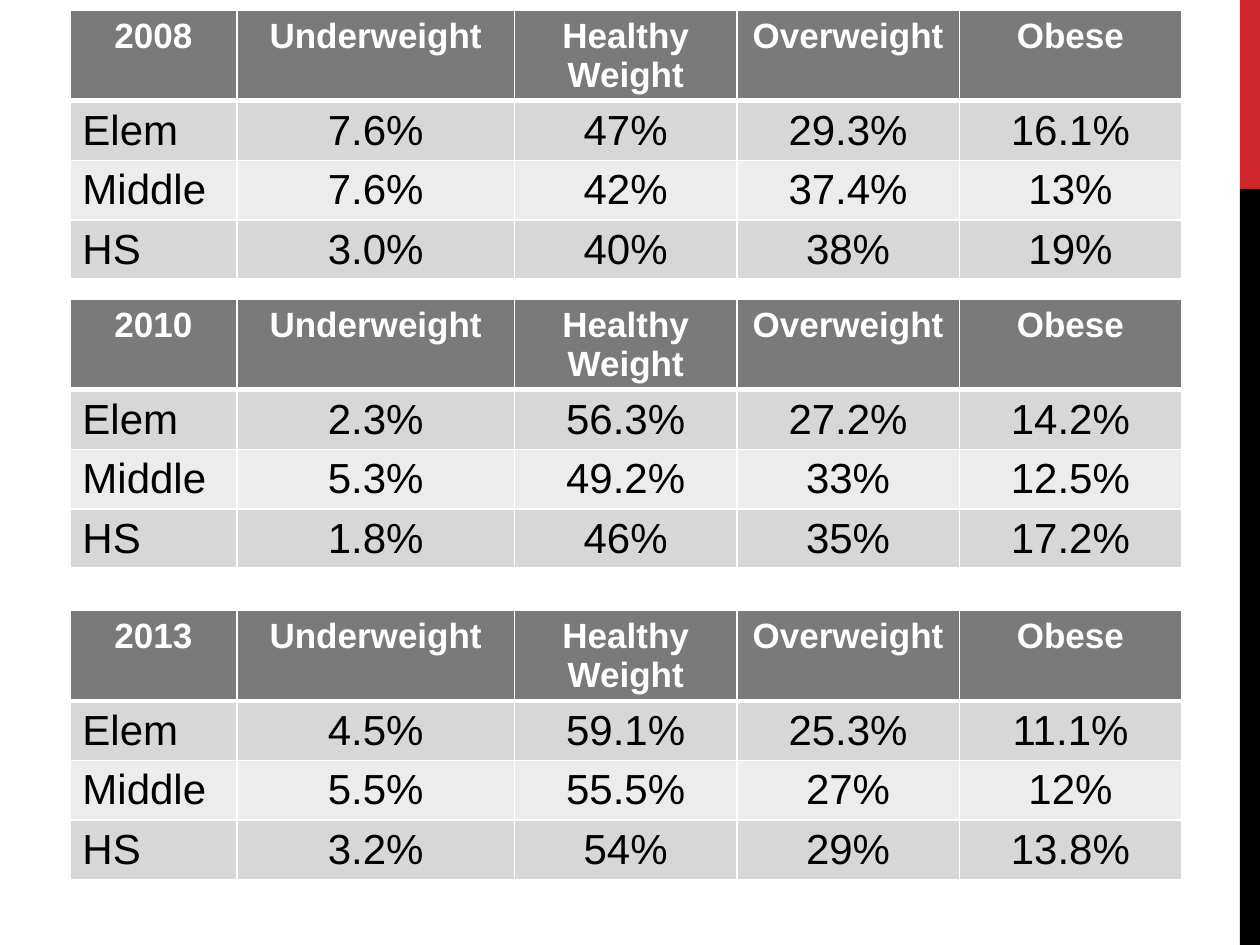
"""Build a slide of three yearly weight-category tables beside a two-colour edge band."""
from lxml.etree import SubElement
from pptx import Presentation
from pptx.dml.color import RGBColor
from pptx.enum.shapes import MSO_SHAPE
from pptx.enum.text import PP_ALIGN
from pptx.oxml.ns import qn
from pptx.util import Pt

CATEGORIES = ["Underweight", "Healthy Weight", "Overweight", "Obese"]
YEARS = [
    ("2008", 5.76, [
        ("Elem", "7.6%", "47%", "29.3%", "16.1%"),
        ("Middle", "7.6%", "42%", "37.4%", "13%"),
        ("HS", "3.0%", "40%", "38%", "19%"),
    ]),
    ("2010", 170.9, [
        ("Elem", "2.3%", "56.3%", "27.2%", "14.2%"),
        ("Middle", "5.3%", "49.2%", "33%", "12.5%"),
        ("HS", "1.8%", "46%", "35%", "17.2%"),
    ]),
    ("2013", 348.7, [
        ("Elem", "4.5%", "59.1%", "25.3%", "11.1%"),
        ("Middle", "5.5%", "55.5%", "27%", "12%"),
        ("HS", "3.2%", "54%", "29%", "13.8%"),
    ]),
]
BANDS = [("D1282E", 0, 108), ("000000", 108, 432)]
PAGE_WIDTH, PAGE_HEIGHT = 720, 540
BAND_WIDTH = 11.5
TABLE_LEFT, TABLE_HEIGHT, ROW_HEIGHT = 39.9, 163.4, 29.4
COLUMN_WIDTHS = [95.5, 158.6, 127.1, 127.1, 127.1]
HEADER_FILL, ROW_FILLS = "7A7A7A", ["ECECEC", "D7D7D7"]


def color(value):
    return RGBColor.from_string(value)


def add_band(page, fill, top, height):
    band = page.shapes.add_shape(
        MSO_SHAPE.RECTANGLE, Pt(PAGE_WIDTH - BAND_WIDTH), Pt(top), Pt(BAND_WIDTH), Pt(height))
    band.shadow.inherit = False
    band.fill.solid()
    band.fill.fore_color.rgb = color(fill)
    band.line.fill.background()


def add_borders(cell, top, bottom):
    properties = cell._tc.get_or_add_tcPr()
    for side, width in (("L", 1), ("R", 1), ("T", top), ("B", bottom)):
        line = SubElement(properties, qn(f"a:ln{side}"), w=str(Pt(width)))
        SubElement(SubElement(line, qn("a:solidFill")), qn("a:srgbClr"), val="FFFFFF")


def fill_cell(cell, text, row, column):
    header = row == 0
    add_borders(cell, top=3 if row == 1 else 1, bottom=3 if header else 1)
    cell.fill.solid()
    cell.fill.fore_color.rgb = color(HEADER_FILL if header else ROW_FILLS[row % 2])
    para = cell.text_frame.paragraphs[0]
    para.alignment = PP_ALIGN.CENTER if header or column else PP_ALIGN.LEFT
    span = para.add_run()
    span.text = text
    span.font.name = "Arial"
    span.font.size = Pt(20 if header else 24)
    span.font.bold = header
    span.font.color.rgb = color("FFFFFF" if header else "000000")


def add_year_table(page, year, top, levels):
    rows = [(year, *CATEGORIES), *levels]
    frame = page.shapes.add_table(
        len(rows), len(COLUMN_WIDTHS), Pt(TABLE_LEFT), Pt(top),
        Pt(sum(COLUMN_WIDTHS)), Pt(TABLE_HEIGHT))
    table = frame.table
    for column, width in zip(table.columns, COLUMN_WIDTHS):
        column.width = Pt(width)
    for row in table.rows:
        row.height = Pt(ROW_HEIGHT)
    frame.height = Pt(TABLE_HEIGHT)
    for row, texts in enumerate(rows):
        for column, text in enumerate(texts):
            fill_cell(table.cell(row, column), text, row, column)


def main():
    deck = Presentation()
    deck.slide_width, deck.slide_height = Pt(PAGE_WIDTH), Pt(PAGE_HEIGHT)
    page = deck.slides.add_slide(deck.slide_layouts[6])
    for band in BANDS:
        add_band(page, *band)
    for year_table in YEARS:
        add_year_table(page, *year_table)
    deck.save("out.pptx")


if __name__ == "__main__":
    main()
